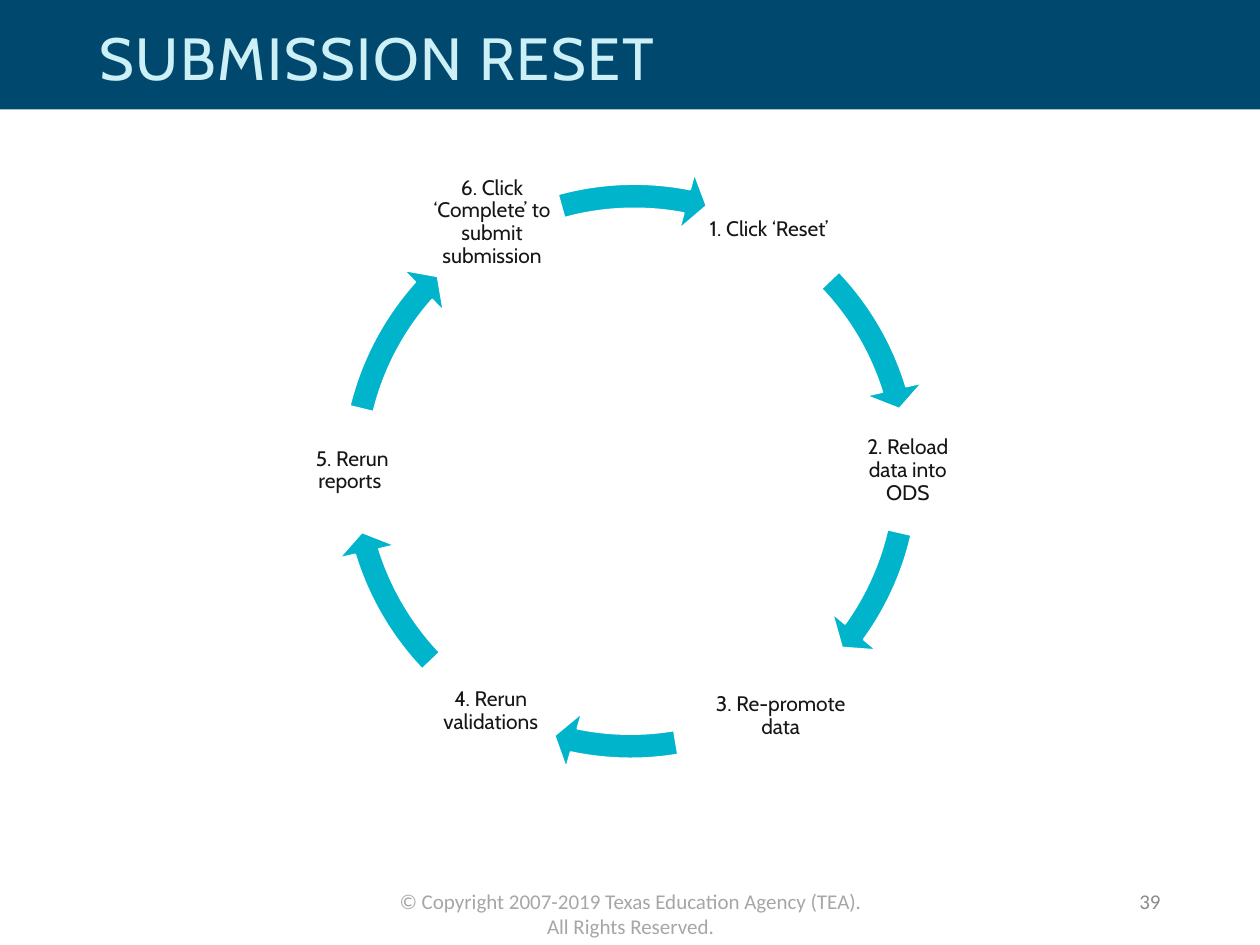
from pptx import Presentation
from pptx.dml.color import RGBColor
from pptx.enum.shapes import MSO_SHAPE
from pptx.enum.text import MSO_ANCHOR, MSO_AUTO_SIZE, PP_ALIGN
from pptx.util import Pt

RECTANGLE, CIRCULAR_ARROW = MSO_SHAPE.RECTANGLE, MSO_SHAPE.CIRCULAR_ARROW
TOP, MIDDLE = MSO_ANCHOR.TOP, MSO_ANCHOR.MIDDLE
LEFT, CENTER, RIGHT = PP_ALIGN.LEFT, PP_ALIGN.CENTER, PP_ALIGN.RIGHT
NO_AUTOFIT = MSO_AUTO_SIZE.NONE

NAVY = RGBColor(0x00, 0x48, 0x6E)
PALE_CYAN = RGBColor(0xCC, 0xF0, 0xF5)
TURQUOISE = RGBColor(0x00, 0xB5, 0xCB)
WHITE = RGBColor(0xFF, 0xFF, 0xFF)
INK = RGBColor(0x17, 0x16, 0x16)
FOOTER_GRAY = RGBColor(0xA6, 0xA6, 0xA6)
NUMBER_GRAY = RGBColor(0x8C, 0x8C, 0x8C)


def write(box, text, font, size, color, align, anchor):
    frame = box.text_frame
    frame.word_wrap = True
    frame.auto_size = NO_AUTOFIT
    frame.vertical_anchor = anchor
    para = frame.paragraphs[0]
    para.alignment = align
    span = para.add_run()
    span.text = text
    span.font.name = font
    span.font.size = Pt(size)
    span.font.color.rgb = color
    return frame, para, span


def add_filled(kind, left, top, width, height, color):
    shape = page.shapes.add_shape(kind, Pt(left), Pt(top), Pt(width), Pt(height))
    shape.shadow.inherit = False
    shape.fill.solid()
    shape.fill.fore_color.rgb = color
    return shape


deck = Presentation()
deck.slide_width, deck.slide_height = Pt(720), Pt(540)
page = deck.slides.add_slide(deck.slide_layouts[5])

title = page.shapes.title
title.left, title.top, title.width, title.height = Pt(49.7), Pt(3.6), Pt(576), Pt(62.6)
frame, para, span = write(title, "SUBMISSION RESET", "Cabin", 34, PALE_CYAN, LEFT, MIDDLE)
para.line_spacing = 0.9
span.font._element.set("spc", "100")

banner = add_filled(RECTANGLE, 0, 0, 720, 62.6, NAVY)
banner.line.fill.background()
title.element.addprevious(banner.element)

footer = page.shapes.add_textbox(Pt(218.9), Pt(504), Pt(283), Pt(21.6))
write(footer, "© Copyright 2007-2019 Texas Education Agency (TEA). All Rights Reserved.",
      "Calibri", 12, FOOTER_GRAY, CENTER, TOP)
number = page.shapes.add_textbox(Pt(508.3), Pt(500.4), Pt(162), Pt(28.8))
write(number, "39", "Calibri", 12, NUMBER_GRAY, RIGHT, MIDDLE)

LABEL_SIZE = 71.3
RING_SIZE = 347.8
ARROW_THICKNESS, HEAD_ANGLE, HEAD_WIDTH = 0.04, 4.17, 0.047
ANGLE_UNIT = 0.6

# label, label left/top/width, ring left/top, start and end degrees
steps = [
    ("1. Click ‘Reset’", 403.9, 95.8, LABEL_SIZE, 186.5, 95, 316.39, 342.88),
    ("2. Reload data into ODS", 483.1, 233.3, LABEL_SIZE, 186.5, 95, 12.95, 35.77),
    ("3. Re-promote data", 401.8, 373.7, 88.6, 186.5, 95, 80.54, 101.85),
    ("4. Rerun validations", 244.8, 370.8, LABEL_SIZE, 186.5, 95, 136.39, 162.88),
    ("5. Rerun reports ", 165.6, 233.3, LABEL_SIZE, 185.8, 97.2, 193.75, 221.74),
    ("6. Click ‘Complete’ to submit submission", 245.5, 91.4, LABEL_SIZE, 188.6, 95.8, 254.64, 281.01),
]
for text, left, top, width, ring_left, ring_top, start, end in steps:
    label = page.shapes.add_textbox(Pt(left), Pt(top), Pt(width), Pt(LABEL_SIZE))
    frame, para, span = write(label, text, "Cabin", 12, INK, CENTER, MIDDLE)
    frame.margin_left = frame.margin_right = Pt(1.2)
    frame.margin_top = frame.margin_bottom = Pt(1.2)
    para.line_spacing = 0.9

    arrow = add_filled(CIRCULAR_ARROW, ring_left, ring_top, RING_SIZE, RING_SIZE, TURQUOISE)
    arrow.line.color.rgb = WHITE
    arrow.line.width = Pt(1)
    angles = [degrees * ANGLE_UNIT for degrees in (HEAD_ANGLE, end, start)]
    for index, value in enumerate([ARROW_THICKNESS, *angles, HEAD_WIDTH]):
        arrow.adjustments[index] = value

deck.save("out.pptx")
